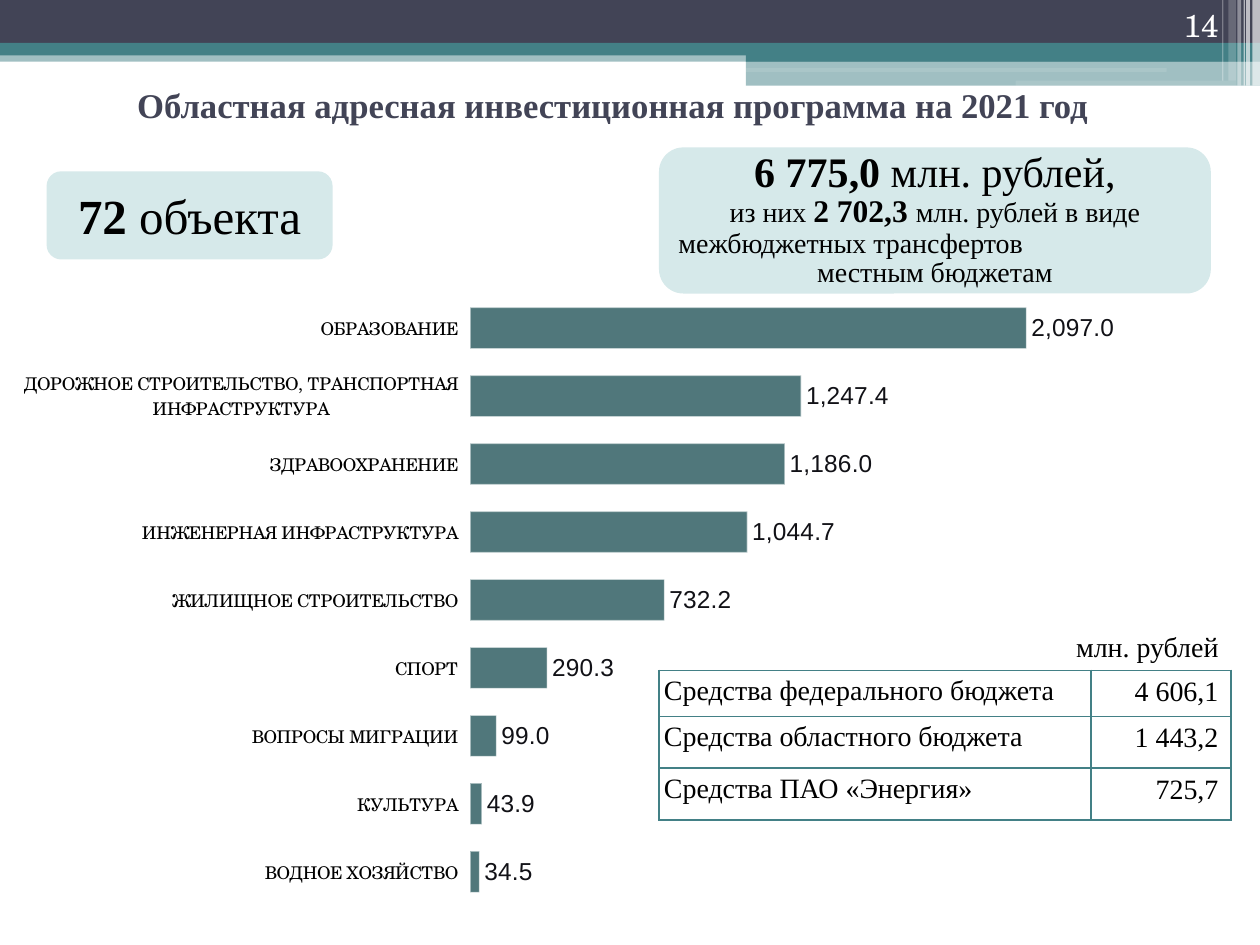
from lxml import etree
from pptx import Presentation
from pptx import util as u
from pptx.chart import data
from pptx.dml.color import RGBColor
from pptx.enum import chart as ch, shapes, text
from pptx.oxml.ns import qn

NAVY = RGBColor(0x42, 0x44, 0x56)
TEAL = RGBColor(0x43, 0x80, 0x86)
BAR = RGBColor(0x32, 0x60, 0x64)
PALE = RGBColor(0xD6, 0xE9, 0xEA)
LABEL = RGBColor(0x11, 0x11, 0x16)
WHITE = RGBColor(0xFF, 0xFF, 0xFF)
BLACK = RGBColor(0, 0, 0)
SERIF, SCHOLA, SANS = "Times New Roman", "TeX Gyre Schola", "Arial"
LEFT, CENTER, RIGHT = text.PP_ALIGN.LEFT, text.PP_ALIGN.CENTER, text.PP_ALIGN.RIGHT
RECT, ROUND = shapes.MSO_SHAPE.RECTANGLE, shapes.MSO_SHAPE.ROUNDED_RECTANGLE

BANDS = [
    (RECT, (0, 0.4, 10, 0.09), TEAL, 50),
    (RECT, (0, 0, 10, 0.34), NAVY, 100),
    (RECT, (0, 0.34, 10, 0.1), TEAL, 100),
    (RECT, (5.92, 0.39, 4.08, 0.1), TEAL, 100),
    (RECT, (5.92, 0.48, 4.08, 0.2), TEAL, 50),
    (ROUND, (5.91, 0.54, 3.35, 0.03), WHITE, 11),
    (ROUND, (8.06, 0.64, 1.75, 0.04), WHITE, 11),
]
STRIPES = [(9.94, 0.06, 0.68, 65), (9.89, 0.03, 0.68, 65), (9.87, 0.01, 0.68, 60),
           (9.82, 0.03, 0.68, 40), (9.75, 0.06, 0.64, 20), (9.7, 0.01, 0.64, 30)]
TITLE = "Областная адресная инвестиционная программа на 2021 год"
CALLOUTS = [
    ((0.37, 1.36, 2.27, 0.7), 1.0, [(CENTER, [("72 ", 28, True), ("объекта", 28, False)])]),
    ((5.23, 1.17, 4.38, 1.16), 0.88, [
        (CENTER, [("6 775,0 ", 24, True), ("млн. рублей,", 24, False)]),
        (CENTER, [("из них ", 16, False), ("2 702,3 ", 18, True), ("млн. рублей в виде", 16, False)]),
        (LEFT, [("межбюджетных трансфертов", 16, False)]),
        (CENTER, [("местным бюджетам", 16, False)]),
    ]),
]
SPENDING = [
    ("ВОДНОЕ ХОЗЯЙСТВО", 34.5),
    ("КУЛЬТУРА", 43.9),
    ("ВОПРОСЫ МИГРАЦИИ", 99),
    ("СПОРТ", 290.3),
    ("ЖИЛИЩНОЕ СТРОИТЕЛЬСТВО", 732.2),
    ("ИНЖЕНЕРНАЯ ИНФРАСТРУКТУРА", 1044.7),
    ("ЗДРАВООХРАНЕНИЕ", 1186),
    ("ДОРОЖНОЕ СТРОИТЕЛЬСТВО, ТРАНСПОРТНАЯ ИНФРАСТРУКТУРА", 1247.4),
    ("ОБРАЗОВАНИЕ", 2097),
]
PLOT = {"x": 0.39, "y": 0.03, "w": 0.585, "h": 0.941}
FUNDS = [("Средства федерального бюджета", "4 606,1"),
         ("Средства областного бюджета", "1 443,2"),
         ("Средства ПАО «Энергия»", "725,7")]
COLS, ROWS = (3.43, 1.11), (0.34, 0.41, 0.41)


def inches(box):
    return [u.Inches(v) for v in box]


def style(font, size, name=SERIF, color=BLACK, bold=False):
    font.size, font.name, font.bold = u.Pt(size), name, bold
    font.color.rgb = color


def set_alpha(clr, percent):
    etree.SubElement(clr, qn("a:alpha")).set("val", str(percent * 1000))


def add_block(s, kind, box, color, alpha=100):
    sp = s.shapes.add_shape(kind, *inches(box))
    sp.shadow.inherit = False
    sp.fill.solid()
    sp.fill.fore_color.rgb = color
    sp.line.fill.background()
    if alpha < 100:
        set_alpha(sp._element.spPr.find(".//" + qn("a:srgbClr")), alpha)
    return sp


def add_label(s, box, words, size, name, color, wrap):
    tf = s.shapes.add_textbox(*inches(box)).text_frame
    tf.word_wrap = wrap
    tf.text = words
    tf.paragraphs[0].alignment = RIGHT
    style(tf.paragraphs[0].runs[0].font, size, name, color)
    return tf


def add_callout(s, box, spacing, lines):
    tf = add_block(s, ROUND, box, PALE).text_frame
    tf.word_wrap = True
    tf.vertical_anchor = text.MSO_ANCHOR.MIDDLE
    tf.margin_top = tf.margin_bottom = 0
    for i, (align, runs) in enumerate(lines):
        p = tf.add_paragraph() if i else tf.paragraphs[0]
        p.alignment, p.line_spacing = align, spacing
        for words, size, bold in runs:
            r = p.add_run()
            r.text = words
            style(r.font, size, bold=bold)


def add_spending_chart(s):
    cd = data.CategoryChartData(number_format="#,##0.0")
    cd.categories = [name for name, _ in SPENDING]
    cd.add_series("Series 1", [value for _, value in SPENDING])
    chart = s.shapes.add_chart(ch.XL_CHART_TYPE.BAR_CLUSTERED,
                               *inches((0.19, 2.18, 9.03, 5.16)), cd).chart
    chart.has_legend = chart.has_title = False
    style(chart.font, 10, SCHOLA)
    cat, val = chart.category_axis, chart.value_axis
    style(cat.tick_labels.font, 10, SCHOLA)
    cat.format.line.fill.background()
    val.has_major_gridlines = val.visible = False
    val.minimum_scale, val.maximum_scale = 0, 2500
    plot = chart.plots[0]
    plot.gap_width, plot.vary_by_categories = 65, False
    plot.has_data_labels = True
    labels = plot.data_labels
    labels.show_value = True
    labels.position = ch.XL_LABEL_POSITION.OUTSIDE_END
    labels.number_format, labels.number_format_is_linked = "#,##0.0", False
    style(labels.font, 14, SANS, LABEL)
    ser = plot.series[0]
    ser.format.fill.solid()
    ser.format.fill.fore_color.rgb = BAR
    ser.format.line.color.rgb = WHITE
    ser.format.line.width = u.Pt(0.75)
    for clr, alpha in zip(ser._element.spPr.iter(qn("a:srgbClr")), (85, 50)):
        set_alpha(clr, alpha)
    area = chart._chartSpace.chart.plotArea
    for old in area.findall(qn("c:layout")):
        area.remove(old)
    layout = etree.Element(qn("c:layout"))
    area.insert(0, layout)
    manual = etree.SubElement(layout, qn("c:manualLayout"))
    settings = {"layoutTarget": "inner", "xMode": "edge", "yMode": "edge", **PLOT}
    for tag, value in settings.items():
        etree.SubElement(manual, qn("c:" + tag)).set("val", str(value))


def add_border(cell):
    tcPr = cell._tc.get_or_add_tcPr()
    for i, side in enumerate(("lnL", "lnR", "lnT", "lnB")):
        ln = etree.Element(qn("a:" + side), w=str(u.Pt(1)))
        fill = etree.SubElement(ln, qn("a:solidFill"))
        etree.SubElement(fill, qn("a:srgbClr"), val=str(TEAL))
        tcPr.insert(i, ln)


def add_funds_table(s):
    box = (5.23, 5.32, sum(COLS), sum(ROWS))
    table = s.shapes.add_table(len(ROWS), len(COLS), *inches(box)).table
    table.first_row = table.horz_banding = False
    for col, width in zip(table.columns, COLS):
        col.width = u.Inches(width)
    for row, height, words in zip(table.rows, ROWS, FUNDS):
        row.height = u.Inches(height)
        for cell, word, align in zip(row.cells, words, (LEFT, RIGHT)):
            cell.text = word
            p = cell.text_frame.paragraphs[0]
            p.alignment = align
            style(p.runs[0].font, 16)
            cell.fill.background()
            add_border(cell)
            if align == LEFT:
                cell.margin_left = cell.margin_right = u.Inches(0.04)
                cell.margin_top = cell.margin_bottom = u.Inches(0.04)


def add_title(s):
    sp = s.shapes.title
    sp.left, sp.top, sp.width, sp.height = inches((0.39, 0.78, 9, 0.39))
    tf = sp.text_frame
    tf.text = TITLE
    tf.word_wrap, tf.auto_size = True, text.MSO_AUTO_SIZE.NONE
    tf.vertical_anchor = text.MSO_ANCHOR.MIDDLE
    tf.margin_top, tf.margin_bottom, tf.margin_right = inches((0, 0.29, 0.16))
    tf.paragraphs[0].alignment = CENTER
    style(tf.paragraphs[0].runs[0].font, 19.8, color=NAVY, bold=True)


def main():
    """Build the investment programme slide."""
    prs = Presentation()
    prs.slide_width, prs.slide_height = inches((10, 7.5))
    s = prs.slides.add_slide(prs.slide_layouts[5])
    for kind, box, color, alpha in BANDS:
        add_block(s, kind, box, color, alpha)
    for left, width, height, alpha in STRIPES:
        add_block(s, RECT, (left, 0, width, height), WHITE, alpha)
    number = add_label(s, (8.94, 0, 0.83, 0.4), "14", 18, SCHOLA, WHITE, True)
    number.vertical_anchor = text.MSO_ANCHOR.BOTTOM
    add_spending_chart(s)
    add_title(s)
    for box, spacing, lines in CALLOUTS:
        add_callout(s, box, spacing, lines)
    add_funds_table(s)
    unit = add_label(s, (8.42, 4.95, 1.35, 0.37), "млн. рублей", 16, SERIF, BLACK, False)
    unit.auto_size = text.MSO_AUTO_SIZE.SHAPE_TO_FIT_TEXT
    prs.save("out.pptx")


if __name__ == "__main__":
    main()
